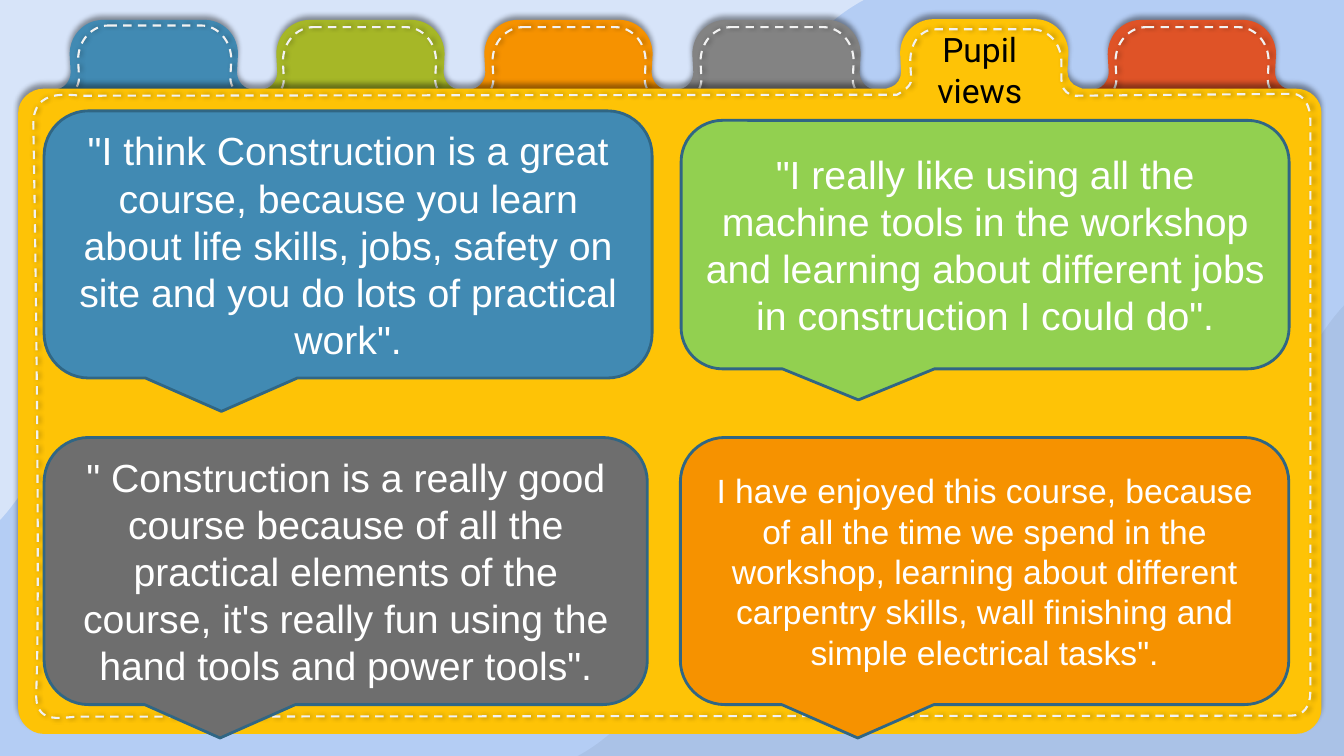
from lxml.etree import SubElement
from pptx import Presentation
from pptx.dml.color import RGBColor
from pptx.enum.dml import MSO_LINE
from pptx.enum.shapes import MSO_SHAPE as SHAPE
from pptx.enum.text import MSO_ANCHOR as ANCHOR, MSO_AUTO_SIZE as AUTO, PP_ALIGN as ALIGN
from pptx.oxml.ns import qn
from pptx.util import Pt

W, H = 960, 540
STITCH = "F2F2F2"

# Outlines: a pair is a corner, six numbers are a Bezier curve.
LOW_WAVE = [
    (960, 218.2), (913, 267.8, 879.1, 402.5, 818.6, 367.9),
    (758.2, 333.4, 736.6, 285.1, 673.2, 387.4),
    (609.8, 489.6, 589.7, 380.2, 545.8, 406.1),
    (502.6, 431.3, 465.1, 512.6, 412.6, 540), (960, 540)]
HIGH_WAVE = [
    (0, 371.5), (53.3, 313.9, 91.4, 159.1, 159.8, 198.7),
    (227.5, 238.3, 252, 295.2, 323.3, 176.4),
    (394.6, 58.3, 417.6, 184.3, 466.6, 154.8),
    (515.5, 125.3, 557.3, 31.7, 617, 0), (0, 0)]
TAB = [
    (34.6, 0), (107.2, 0), (120.3, 0, 131, 10.8, 131, 24.5), (130.3, 37.4),
    (130.3, 43.9, 135.4, 49.7, 141.8, 49.7), (0, 49.7),
    (6.5, 49.7, 11.5, 43.9, 11.5, 37.4), (10.8, 24.5),
    (10.8, 10.8, 21.6, 0, 34.6, 0)]
FOLDER = [
    (666.7, 13.7), (739.4, 13.7), (752.4, 13.7, 763.2, 24.5, 763.2, 38.2),
    (762.5, 51.1), (762.5, 56.2, 765.4, 60.5, 769.7, 61.9), (773.3, 63.4),
    (925.9, 63.4), (936, 63.4, 943.9, 71.3, 943.9, 80.6),
    (943.9, 506.2), (943.9, 515.5, 936, 524.2, 925.9, 524.2),
    (31, 524.2), (21.6, 524.2, 13, 515.5, 13, 506.2),
    (13, 80.6), (13, 71.3, 21.6, 63.4, 31, 63.4), (632.9, 63.4),
    (637.2, 61.9), (640.8, 60.5, 643.7, 56.2, 643.7, 51.1), (643, 38.2),
    (643, 24.5, 653.8, 13.7, 666.7, 13.7)]
FOLDER_STITCH = [
    (736.6, 20.9), (668.9, 20.9), (656.6, 20.9, 650.2, 31, 650.2, 44.6),
    (650.9, 56.9), (650.9, 61.9, 644.4, 65.5, 640.8, 67.7), (59.8, 68.4),
    (50.4, 68.4, 23.8, 61.9, 23.8, 88.6),
    (25.2, 159.8, 28.8, 423.4, 25.9, 493.9),
    (24.5, 517.7, 42.5, 512.6, 55.4, 511.9), (922.3, 511.2),
    (931.7, 511.2, 936, 504, 936, 493.9), (936, 85.7),
    (936, 76.3, 931.7, 67, 923, 67), (768.2, 68.4), (764.6, 67.7),
    (760.3, 65.5, 758.2, 61.9, 758.2, 56.9), (758.2, 44.6),
    (758.2, 31, 749, 20.9, 736.6, 20.9)]

# left, colour, stitch left, stitch top
TABS = [
    (780.5, "DF5327", 787, 19.4),
    (39, "418AB3", 46, 18.2),
    (186.6, "A6B727", 192.3, 19.4),
    (335.2, "F69200", 342, 19.4),
    (483.8, "838383", 490.6, 19.4)]
TAB_TOP, STITCH_SCALE = 14.2, 0.91

TITLE = "Pupil views"
# left, top, width, height, colour, text size, text
QUOTES = [
    (31.5, 79.2, 434.3, 190.8, "418AB3", 28,
     '"I think Construction is a great course, because you learn about life '
     'skills, jobs, safety on site and you do lots of practical work".'),
    (486.5, 86, 434.3, 177.5, "92D050", 28,
     '"I really like using all the machine tools in the workshop and learning '
     'about different jobs in construction I could do".'),
    (31.5, 312.5, 430.9, 190.8, "6E6E6E", 28,
     '" Construction is a really good course because of all the practical '
     "elements of the course, it's really fun using the hand tools and power "
     'tools".'),
    (486, 312.5, 434.6, 190.8, "F69200", 24,
     'I have enjoyed this course, because of all the time we spend in the '
     'workshop, learning about different carpentry skills, wall finishing and '
     'simple electrical tasks".')]


def rgb(code):
    return RGBColor.from_string(code)


def paint(sp, fill=None, alpha=100, line=None, width=1.5):
    sp.shadow.inherit = False
    if fill:
        sp.fill.solid()
        sp.fill.fore_color.rgb = rgb(fill)
        if alpha < 100:
            clr = sp._element.spPr.find(qn("a:solidFill"))[0]
            SubElement(clr, qn("a:alpha"), val=str(alpha * 1000))
    else:
        sp.fill.background()
    if line:
        sp.line.color.rgb = rgb(line)
        sp.line.width = Pt(width)
    else:
        sp.line.fill.background()


def cast_shadow(sp, dist, angle):
    effects = sp._element.spPr.find(qn("a:effectLst"))
    shadow = SubElement(effects, qn("a:outerShdw"), blurRad=str(Pt(4)), dist=str(Pt(dist)),
                        dir=str(angle * 60000), algn="ctr", rotWithShape="0")
    clr = SubElement(shadow, qn("a:srgbClr"), val="000000")
    SubElement(clr, qn("a:alpha"), val="40000")


def add_outline(outline, dx=0, dy=0, x_scale=1):
    """Build a freeform through the corners, then bend the curved sides."""
    parts = [[(Pt(dx + x * x_scale), Pt(dy + y)) for x, y in zip(part[::2], part[1::2])]
             for part in outline]
    builder = s.shapes.build_freeform(*parts[0][-1])
    builder.add_line_segments([part[-1] for part in parts[1:]], close=True)
    sp = builder.convert_to_shape()
    trace = next(sp._element.iter(qn("a:path")))
    for side, part in zip(list(trace)[1:], parts[1:]):
        if len(part) == 3:
            curve = SubElement(trace, qn("a:cubicBezTo"))
            for x, y in part:
                SubElement(curve, qn("a:pt"), x=str(x - sp.left), y=str(y - sp.top))
            trace.replace(side, curve)
    return sp


def add_card(outline, fill, *place):
    sp = add_outline(outline, *place)
    paint(sp, fill)
    cast_shadow(sp, 3, 270)


def add_stitch(outline, *place):
    sp = add_outline(outline, *place)
    paint(sp, line=STITCH)
    sp.line.dash_style = MSO_LINE.DASH
    cast_shadow(sp, 1.5, 0)


def write(sp, text, size, font, color):
    tf = sp.text_frame
    tf.word_wrap = True
    tf.auto_size = AUTO.NONE
    tf.vertical_anchor = ANCHOR.MIDDLE
    p = tf.paragraphs[0]
    p.alignment = ALIGN.CENTER
    r = p.add_run()
    r.text = text
    r.font.size = Pt(size)
    r.font.name = font
    r.font.color.rgb = rgb(color)
    return tf


prs = Presentation()
prs.slide_width, prs.slide_height = Pt(W), Pt(H)
s = prs.slides.add_slide(prs.slide_layouts[5])
s.background.fill.solid()
s.background.fill.fore_color.rgb = rgb("6D9EEB")

veil = s.shapes.add_shape(SHAPE.RECTANGLE, 0, 0, Pt(W), Pt(H))
paint(veil, "FFFFFF", 49)
paint(add_outline(LOW_WAVE), "000000", 5)
paint(add_outline(HIGH_WAVE), "FFFFFF", 47)

for left, color, stitch_left, stitch_top in TABS:
    add_card(TAB, color, left, TAB_TOP)
    add_stitch(TAB, stitch_left, stitch_top, STITCH_SCALE)
add_card(FOLDER, "FEC306")
add_stitch(FOLDER_STITCH)

title = s.shapes.title
title.left, title.top, title.width, title.height = Pt(651.6), Pt(31.7), Pt(96.5), Pt(36)
tf = write(title, TITLE, 24, "Roboto", "000000")
tf.margin_left = tf.margin_right = tf.margin_top = tf.margin_bottom = Pt(7.2)
s.shapes._spTree.append(title._element)  # bring in front of the folder

for left, top, width, height, color, size, text in QUOTES:
    sp = s.shapes.add_shape(SHAPE.ROUNDED_RECTANGULAR_CALLOUT,
                            Pt(left), Pt(top), Pt(width), Pt(height))
    paint(sp, color, line="306684", width=2)
    write(sp, text, size, "Arial", "FFFFFF")

prs.save("out.pptx")
